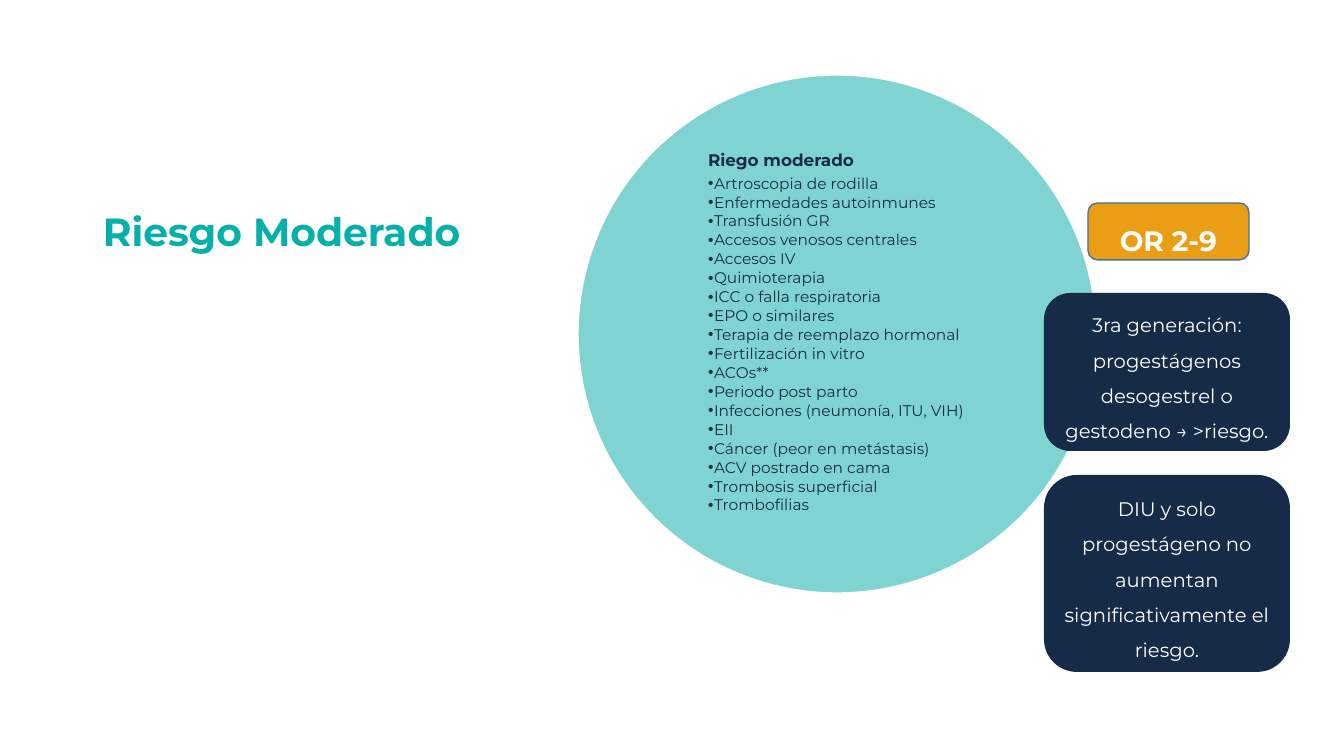
from lxml import etree
from pptx import Presentation, util as u
from pptx.dml.color import RGBColor
from pptx.enum import shapes, text
from pptx.oxml.ns import qn

PX = 914400 / 100.8
TEAL, NAVY, ORANGE, WHITE = "06B0AA", "152B48", "EA9E16", "FFFFFF"


def px(*lengths):
    return [round(n * PX) for n in lengths]


def add_run(p, words, size, color, bold=False):
    r = p.add_run()
    r.text = words
    r.font.name = "Montserrat"
    r.font.size = u.Pt(size)
    r.font.bold = bold
    r.font.color.rgb = RGBColor.from_string(color)


prs = Presentation()
prs.slide_width, prs.slide_height = px(1344, 756)
s = prs.slides.add_slide(prs.slide_layouts[6])

# Title
tf = s.shapes.add_textbox(*px(93, 180, 1198, 108)).text_frame
tf.word_wrap = True
tf.vertical_anchor = text.MSO_ANCHOR.MIDDLE
tf.paragraphs[0].line_spacing = 0.9
add_run(tf.paragraphs[0], "Riesgo Moderado", 28, TEAL, True)

# Half-transparent circle
circle = s.shapes.add_shape(shapes.MSO_SHAPE.OVAL, *px(578, 75, 518, 518))
circle.shadow.inherit = False
circle.fill.solid()
circle.fill.fore_color.rgb = RGBColor.from_string("00AAA7")
color = circle.fill._xPr.find(qn("a:solidFill"))[0]
etree.SubElement(color, qn("a:alpha"), val="50000")
circle.line.color.rgb = RGBColor.from_string(WHITE)
circle.line.width = u.Pt(1)

# Risk factors inside the circle
factors = [
    "Artroscopia de rodilla", "Enfermedades autoinmunes", "Transfusión GR",
    "Accesos venosos centrales", "Accesos IV", "Quimioterapia",
    "ICC o falla respiratoria", "EPO o similares",
    "Terapia de reemplazo hormonal", "Fertilización in vitro", "ACOs**",
    "Periodo post parto", "Infecciones (neumonía, ITU, VIH)", "EII",
    "Cáncer (peor en metástasis)", "ACV postrado en cama",
    "Trombosis superficial", "Trombofilias",
]
tf = s.shapes.add_textbox(*px(653, 150, 366, 366)).text_frame
tf.word_wrap = True
tf.vertical_anchor = text.MSO_ANCHOR.MIDDLE
tf.margin_left, tf.margin_top, tf.margin_right, tf.margin_bottom = px(55, 2, 28, 2)
p = tf.paragraphs[0]
p.line_spacing = 0.9
p.space_after = u.Pt(4.2)
add_run(p, "Riego moderado", 12, NAVY, True)
for factor in factors:
    p = tf.add_paragraph()
    p.level = 1
    p.line_spacing = 0.9
    p.space_after = u.Pt(1.65)
    pPr = p._p.get_or_add_pPr()
    pPr.set("marL", str(px(6)[0]))
    pPr.set("indent", str(px(-6)[0]))
    etree.SubElement(pPr, qn("a:buFont"), typeface="Arial")
    etree.SubElement(pPr, qn("a:buChar"), char="•")
    add_run(p, factor, 11, NAVY)

# Odds ratio badge and notes: box, fill, outline, words, size, bold
cards = [
    ((1088, 203, 161, 57), ORANGE, "43739E", "OR 2-9", 20, True),
    ((1044, 475, 246, 197), NAVY, None,
     "DIU y solo progestágeno no aumentan significativamente el riesgo.", 14, False),
    ((1044, 293, 246, 158), NAVY, None,
     "3ra generación: progestágenos desogestrel o gestodeno → >riesgo.", 14, False),
]
for box, fill, outline, words, size, bold in cards:
    sp = s.shapes.add_shape(shapes.MSO_SHAPE.ROUNDED_RECTANGLE, *px(*box))
    sp.shadow.inherit = False
    sp.fill.solid()
    sp.fill.fore_color.rgb = RGBColor.from_string(fill)
    if outline:
        sp.line.color.rgb = RGBColor.from_string(outline)
        sp.line.width = u.Pt(1)
    else:
        sp.line.fill.background()
    tf = sp.text_frame
    tf.word_wrap = True
    tf.auto_size = text.MSO_AUTO_SIZE.SHAPE_TO_FIT_TEXT
    tf.vertical_anchor = text.MSO_ANCHOR.MIDDLE
    tf.margin_left = tf.margin_top = tf.margin_right = tf.margin_bottom = 0
    p = tf.paragraphs[0]
    p.alignment = text.PP_ALIGN.CENTER
    p.line_spacing = 1.5
    add_run(p, words, size, WHITE, bold)

prs.save("out.pptx")
